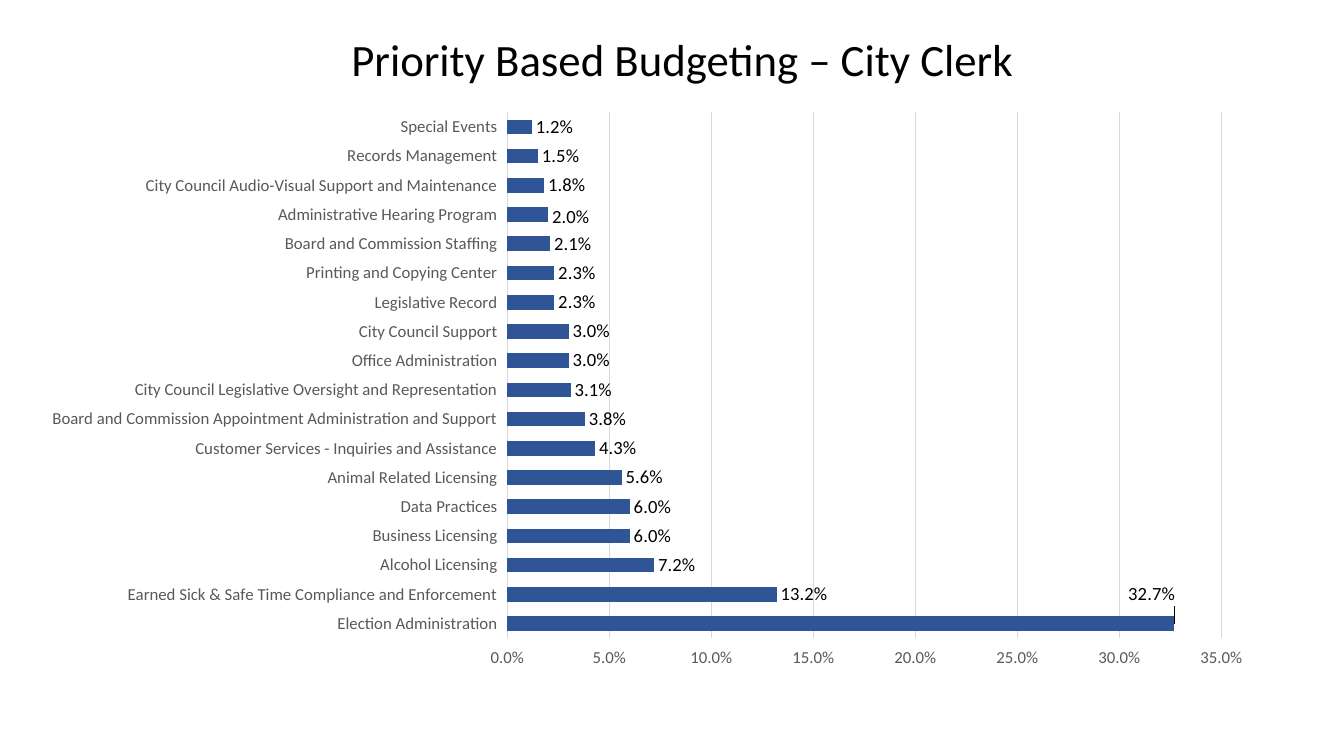
from pptx import Presentation
from pptx.chart.data import CategoryChartData
from pptx.dml.color import RGBColor
from pptx.enum.chart import XL_CHART_TYPE, XL_LABEL_POSITION, XL_TICK_MARK
from pptx.enum.text import MSO_ANCHOR, PP_ALIGN
from pptx.oxml import parse_xml
from pptx.oxml.ns import nsdecls
from pptx.util import Cm, Pt

BAR_CLUSTERED = XL_CHART_TYPE.BAR_CLUSTERED
OUTSIDE_END = XL_LABEL_POSITION.OUTSIDE_END
TICK_OUTSIDE = XL_TICK_MARK.OUTSIDE
TICK_NONE = XL_TICK_MARK.NONE
MIDDLE = MSO_ANCHOR.MIDDLE
CENTER = PP_ALIGN.CENTER

FONT = "Calibri"
COLORS = {"text": "000000", "axis": "595959", "grid": "D9D9D9", "bar": "2F5597"}
PERCENT = "0.0%"
TITLE_ONLY_LAYOUT = 5

PROGRAM_SHARES = {
    "Election Administration": 0.327,
    "Earned Sick & Safe Time Compliance and Enforcement": 0.132,
    "Alcohol Licensing": 0.072,
    "Business Licensing": 0.06,
    "Data Practices": 0.06,
    "Animal Related Licensing": 0.056,
    "Customer Services - Inquiries and Assistance": 0.043,
    "Board and Commission Appointment Administration and Support": 0.038,
    "City Council Legislative Oversight and Representation": 0.031,
    "Office Administration": 0.03,
    "City Council Support": 0.03,
    "Legislative Record": 0.023,
    "Printing and Copying Center": 0.023,
    "Board and Commission Staffing": 0.021,
    "Administrative Hearing Program": 0.02,
    "City Council Audio-Visual Support and Maintenance": 0.018,
    "Records Management": 0.015,
    "Special Events": 0.012,
}

# Shifts of single labels, as shares of the chart's width and height
LABEL_SHIFTS = {0: {"x": -0.041, "y": -0.05}, 14: {"x": 0, "y": 0.004}}


def color(name):
    return RGBColor.from_string(COLORS[name])


def format_font(font, size, color_name):
    font.name = FONT
    font.size = Pt(size)
    font.color.rgb = color(color_name)


def manual_layout(**settings):
    items = "".join(f'<c:{key} val="{value}"/>' for key, value in settings.items())
    return parse_xml(f'<c:layout {nsdecls("c")}><c:manualLayout>{items}'
                     '</c:manualLayout></c:layout>')


def add_title(slide, text, left, top, width, height):
    title = slide.shapes.title
    title.left, title.top, title.width, title.height = left, top, width, height
    text_frame = title.text_frame
    text_frame.text = text
    text_frame.vertical_anchor = MIDDLE
    text_frame.word_wrap = True
    paragraph = text_frame.paragraphs[0]
    paragraph.alignment = CENTER
    paragraph.line_spacing = 0.9
    format_font(paragraph.runs[0].font, 32, "text")


def format_axes(chart):
    for axis in (chart.category_axis, chart.value_axis):
        format_font(axis.tick_labels.font, 12, "axis")
        axis.format.line.fill.background()
        axis.major_tick_mark = TICK_OUTSIDE
        axis.minor_tick_mark = TICK_NONE
    chart.category_axis.has_major_gridlines = False

    value_axis = chart.value_axis
    value_axis.minimum_scale = 0
    value_axis.maximum_scale = 0.35
    value_axis.major_unit = 0.05
    value_axis.tick_labels.number_format = PERCENT
    value_axis.tick_labels.number_format_is_linked = False
    value_axis.has_major_gridlines = True
    gridline = value_axis.major_gridlines.format.line
    gridline.color.rgb = color("grid")
    gridline.width = Pt(0.75)


def format_labels(chart, series):
    labels = series.data_labels
    labels.show_value = True
    labels.number_format = PERCENT
    labels.number_format_is_linked = False
    labels.position = OUTSIDE_END
    format_font(labels.font, 13.3, "text")

    # Labels moved off the end of their bars
    for index, shift in LABEL_SHIFTS.items():
        label = series.points[index].data_label
        label.position = OUTSIDE_END
        format_font(label.font, 13.3, "text")
        element = chart.element.xpath(f".//c:dLbl[c:idx/@val='{index}']")[0]
        element.insert(1, manual_layout(**shift))


def add_share_chart(slide, left, top, width, height):
    data = CategoryChartData(number_format=PERCENT)
    data.categories = list(PROGRAM_SHARES)
    data.add_series("Series 1", list(PROGRAM_SHARES.values()))
    chart = slide.shapes.add_chart(BAR_CLUSTERED, left, top, width, height, data).chart
    chart.has_title = False
    chart.has_legend = False
    format_font(chart.font, 10, "text")

    # Bars
    plot = chart.plots[0]
    plot.gap_width = 100
    plot.vary_by_categories = False
    series = plot.series[0]
    series.invert_if_negative = False
    series.format.fill.solid()
    series.format.fill.fore_color.rgb = color("bar")

    format_axes(chart)
    format_labels(chart, series)

    # Inner plot area
    plot_area = chart.element.xpath(".//c:plotArea")[0]
    for layout in plot_area.xpath("./c:layout"):
        plot_area.remove(layout)
    plot_area.insert(0, manual_layout(
        layoutTarget="inner", xMode="edge", yMode="edge",
        x=0.391, y=0.022, w=0.584, h=0.904))


def main():
    presentation = Presentation()
    presentation.slide_width = Cm(33.87)
    presentation.slide_height = Cm(19.05)
    slide = presentation.slides.add_slide(presentation.slide_layouts[TITLE_ONLY_LAYOUT])
    add_title(slide, "Priority Based Budgeting – City Clerk",
              Cm(8.3), Cm(0.6), Cm(17.8), Cm(1.9))
    add_share_chart(slide, Cm(0.74), Cm(2.51), Cm(30.81), Cm(14.66))
    presentation.save("out.pptx")


if __name__ == "__main__":
    main()
